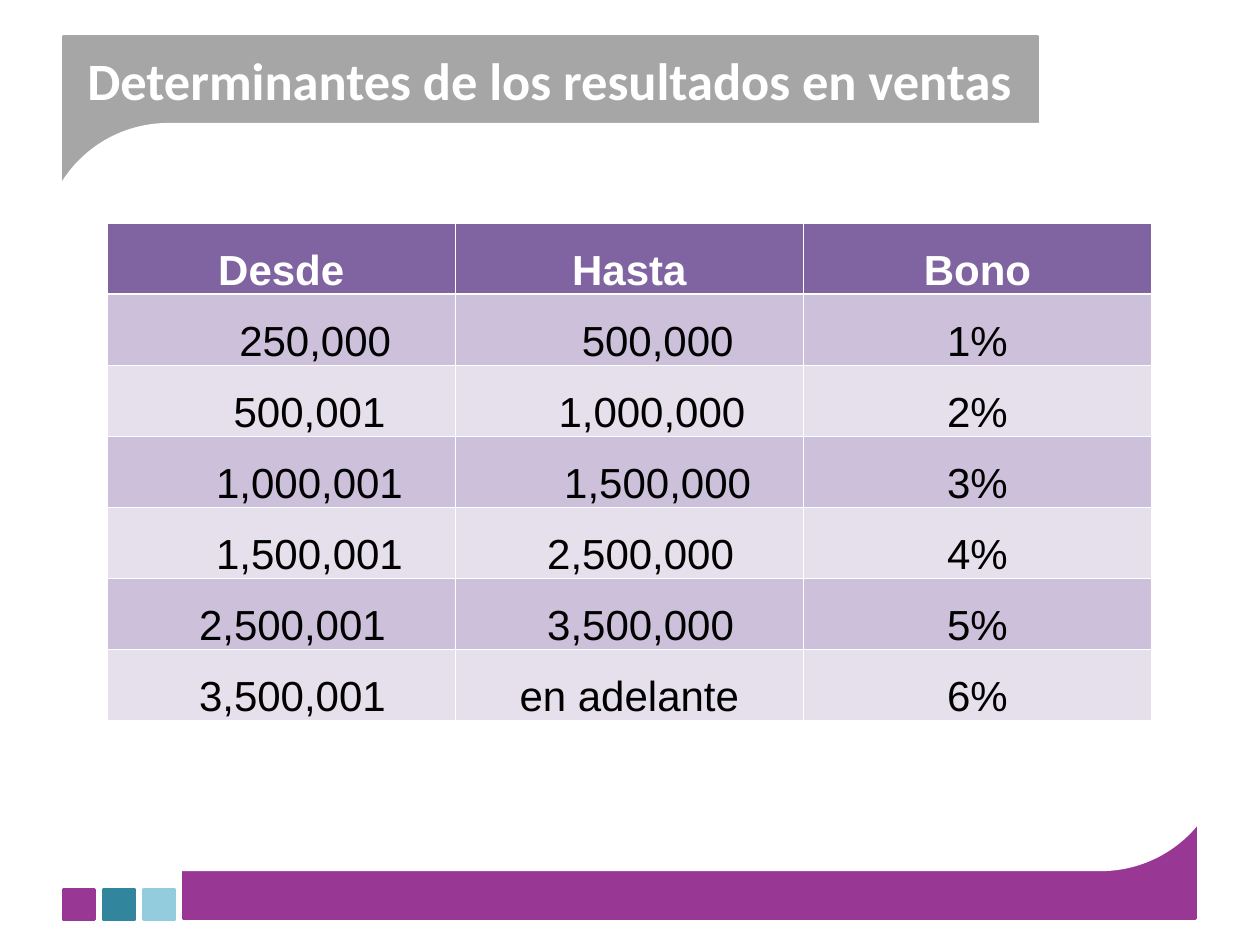
from lxml import etree
from pptx import Presentation, util as u
from pptx.dml.color import RGBColor
from pptx.enum import shapes, text
from pptx.oxml.ns import qn

GRAY, PURPLE, TEAL, SKY, WHITE = "A6A6A6", "993794", "31859C", "93CDDD", "FFFFFF"
HEADER, DARK_BAND, LIGHT_BAND = "8064A2", "CCC0DA", "E5E0EC"


def paint(target, color):
    """Give a fill, line or font one solid colour."""
    if hasattr(target, "solid"):
        target.solid()
        target.fore_color.rgb = RGBColor.from_string(color)
    elif hasattr(target, "dash_style"):
        paint(target.fill, color)
    else:
        target.color.rgb = RGBColor.from_string(color)


def add_border(cell, side, points):
    """Draw a white line on one side (L, R, T or B); call before filling the cell."""
    line = etree.SubElement(cell._tc.get_or_add_tcPr(), qn(f"a:ln{side}"), w=str(u.Pt(points)))
    fill = etree.SubElement(line, qn("a:solidFill"))
    etree.SubElement(fill, qn("a:srgbClr"), val=WHITE)


deck = Presentation()
deck.slide_width, deck.slide_height = u.Inches(10), u.Inches(7.5)
page = deck.slides.add_slide(deck.slide_layouts[5])

# The white panel goes last and cuts the curves out of both bands.
rectangle = shapes.MSO_SHAPE.RECTANGLE
swatch, swatch_step = 0.24, 0.315
decorations = [
    (shapes.MSO_SHAPE.FLOWCHART_PROCESS, GRAY, 0.51, 0.29, 7.72, 1.42),
    (rectangle, PURPLE, 1.46, 6.03, 8.03, 1.26),
]
for index, color in enumerate((PURPLE, TEAL, SKY)):
    decorations.append((rectangle, color, 0.51 + index * swatch_step, 7.06, swatch, swatch))
decorations.append((shapes.MSO_SHAPE.ROUNDED_RECTANGLE, WHITE, 0.35, 0.99, 9.37, 5.91))

for kind, color, *place in decorations:
    shape = page.shapes.add_shape(kind, *map(u.Inches, place))
    shape.shadow.inherit = False
    paint(shape.fill, color)
    paint(shape.line, color)
    shape.line.width = u.Pt(2)

title = page.shapes.title
page.shapes._spTree.append(title._element)  # in front of the gray band
title.left, title.top, title.width, title.height = map(u.Inches, (0.5, 0.29, 7.73, 0.69))
title.text = "Determinantes de los resultados en ventas"
frame = title.text_frame
frame.auto_size = text.MSO_AUTO_SIZE.NONE
frame.vertical_anchor = text.MSO_ANCHOR.MIDDLE
para = frame.paragraphs[0]
para.alignment = text.PP_ALIGN.CENTER
para.font.name, para.font.size, para.font.bold = "Calibri", u.Pt(30), True
paint(para.font, WHITE)

# Each cell: its text and how many digit-spacing units it is pushed to the right.
rows = [
    [("Desde", 0), ("Hasta", 0), ("Bono", 0)],
    [("250,000", 6), ("500,000", 5), ("1%", 0)],
    [("500,001", 5), ("1,000,000", 4), ("2%", 0)],
    [("1,000,001", 5), ("1,500,000", 5), ("3%", 0)],
    [("1,500,001", 5), ("2,500,000", 2), ("4%", 0)],
    [("2,500,001", 2), ("3,500,000", 2), ("5%", 0)],
    [("3,500,001", 2), ("en adelante", 0), ("6%", 0)],
]
inset, space = 0.01, 0.09
table = page.shapes.add_table(len(rows), len(rows[0]), *map(u.Inches, (0.85, 1.77, 8.29, 3.95))).table
table.horz_banding = False

for r, row in enumerate(rows):
    is_header = r == 0
    for c, (label, push) in enumerate(row):
        cell = table.cell(r, c)
        cell.text = label
        cell.vertical_anchor = text.MSO_ANCHOR.BOTTOM
        cell.margin_left = u.Inches(inset + push * space)
        cell.margin_right = cell.margin_top = u.Inches(inset)
        cell.margin_bottom = 0
        for side in "LRTB":
            under_header = (r, side) in ((0, "B"), (1, "T"))
            add_border(cell, side, 1.5 if under_header else 0.5)
        paint(cell.fill, HEADER if is_header else DARK_BAND if r % 2 else LIGHT_BAND)
        para = cell.text_frame.paragraphs[0]
        para.alignment = text.PP_ALIGN.CENTER
        para.font.name, para.font.size, para.font.bold = "Arial", u.Pt(24), is_header
        paint(para.font, WHITE if is_header else "000000")

deck.save("out.pptx")
